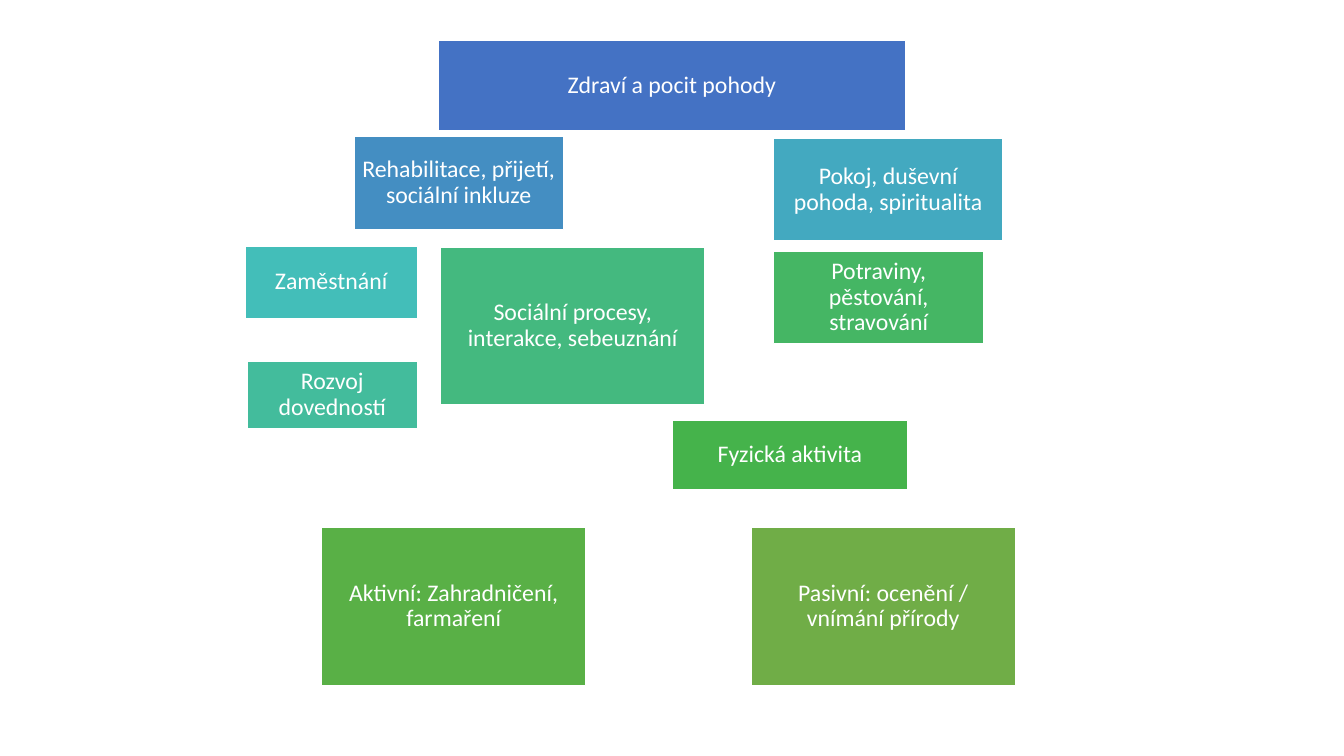
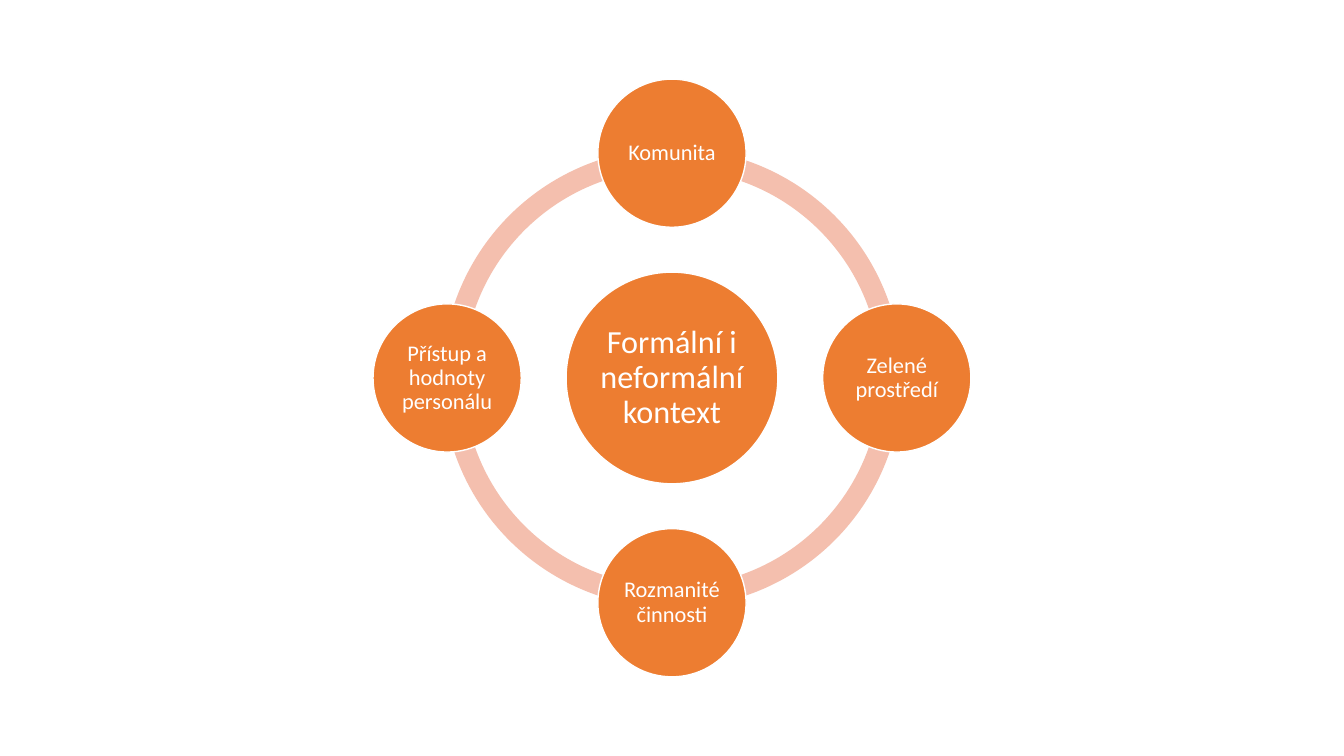
"""Build two slides: benefit blocks and a ring of context factors."""
from dataclasses import dataclass
from math import cos, pi, sin

from pptx import Presentation
from pptx.dml.color import RGBColor
from pptx.enum.shapes import MSO_SHAPE as Shape
from pptx.enum.text import MSO_ANCHOR as Anchor, PP_ALIGN as Align
from pptx.util import Inches, Pt


@dataclass(frozen=True)
class Theme:
    font: str = "Calibri"
    white: str = "FFFFFF"
    circle: str = "ED7D31"
    ring: str = "F4BFAE"
    blocks: tuple = ("4472C4", "448EC2", "43A9C0", "43BEB9", "43BC9C",
                     "44B97F", "45B664", "45B34B", "59B046", "70AD47")
    block_size: int = 17
    center_size: int = 23
    orbit_size: int = 16
    line_spacing: float = 0.9
    outline: int = 1


THEME = Theme()
WIDTH, HEIGHT = 13.33, 7.5

BLOCKS = [
    ("Zdraví a pocit pohody", 4.35, 0.4, 4.63, 0.9),
    ("Rehabilitace, přijetí, sociální inkluze", 3.51, 1.35, 2.08, 0.93),
    ("Pokoj, duševní pohoda, spiritualita", 7.67, 1.37, 2.28, 1.02),
    ("Zaměstnání", 2.43, 2.44, 1.71, 0.72),
    ("Rozvoj dovedností", 2.45, 3.58, 1.69, 0.67),
    ("Sociální procesy, interakce, sebeuznání", 4.37, 2.45, 2.62, 1.57),
    ("Potraviny, pěstování, stravování", 7.67, 2.49, 2.09, 0.92),
    ("Fyzická aktivita", 6.67, 4.17, 2.33, 0.69),
    ("Aktivní: Zahradničení, farmaření", 3.19, 5.23, 2.62, 1.57),
    ("Pasivní: ocenění / vnímání přírody", 7.45, 5.23, 2.62, 1.57),
]
BLOCK_INSET = 0.07

CENTER = "Formální i neformální kontext"
ORBIT = ["Komunita", "Zelené prostředí", "Rozmanité činnosti",
         "Přístup a hodnoty personálu"]
CENTER_DIAMETER, CENTER_INSET = 2.1, 0.03
ORBIT_DIAMETER, ORBIT_INSET = 1.47, 0.02
ORBIT_RADIUS = 2.23
RING_DIAMETER, RING_THICKNESS = 4.56, 0.046
HALF_TURN, FULL_TURN = 108, 216


def add_filled(page, kind, bounds, color):
    """Add a flat preset shape without an outline."""
    shape = page.shapes.add_shape(kind, *map(Inches, bounds))
    shape.shadow.inherit = False
    shape.fill.solid()
    shape.fill.fore_color.rgb = RGBColor.from_string(color)
    shape.line.fill.background()
    return shape


def add_label(page, kind, bounds, color, text, size, inset):
    """Add a white-edged shape with centred white text."""
    shape = add_filled(page, kind, bounds, color)
    white = RGBColor.from_string(THEME.white)
    shape.line.color.rgb = white
    shape.line.width = Pt(THEME.outline)
    box = shape.text_frame
    box.word_wrap = True
    box.vertical_anchor = Anchor.MIDDLE
    box.margin_left = box.margin_right = Inches(inset)
    box.margin_top = box.margin_bottom = Inches(inset)
    para = box.paragraphs[0]
    para.text = text
    para.alignment = Align.CENTER
    para.line_spacing = THEME.line_spacing
    para.font.name = THEME.font
    para.font.size = Pt(size)
    para.font.color.rgb = white


def round_bounds(diameter, angle=0, radius=0):
    """Return the bounds of a circle placed around the slide centre."""
    left = WIDTH / 2 + radius * cos(angle) - diameter / 2
    top = HEIGHT / 2 + radius * sin(angle) - diameter / 2
    return left, top, diameter, diameter


def build_blocks(page):
    """Draw the coloured benefit blocks."""
    for (text, *bounds), color in zip(BLOCKS, THEME.blocks):
        add_label(page, Shape.RECTANGLE, bounds, color, text,
                  THEME.block_size, BLOCK_INSET)


def build_ring(page):
    """Draw the ring, the centre and the circles around it."""
    step = FULL_TURN // len(ORBIT)
    for index in range(len(ORBIT)):
        start = (HALF_TURN - index * step) % FULL_TURN
        arc = add_filled(page, Shape.BLOCK_ARC, round_bounds(RING_DIAMETER),
                         THEME.ring)
        arc.adjustments[0] = start
        arc.adjustments[1] = (start + step) % FULL_TURN
        arc.adjustments[2] = RING_THICKNESS
    add_label(page, Shape.OVAL, round_bounds(CENTER_DIAMETER), THEME.circle,
              CENTER, THEME.center_size, CENTER_INSET)
    for index, text in enumerate(ORBIT):
        angle = 2 * pi * index / len(ORBIT) - pi / 2
        bounds = round_bounds(ORBIT_DIAMETER, angle, ORBIT_RADIUS)
        add_label(page, Shape.OVAL, bounds, THEME.circle, text,
                  THEME.orbit_size, ORBIT_INSET)


def main():
    """Build and save the deck."""
    deck = Presentation()
    deck.slide_width, deck.slide_height = Inches(WIDTH), Inches(HEIGHT)
    blank = deck.slide_layouts.get_by_name("Blank")
    for build in (build_blocks, build_ring):
        build(deck.slides.add_slide(blank))
    deck.save("out.pptx")


if __name__ == "__main__":
    main()
